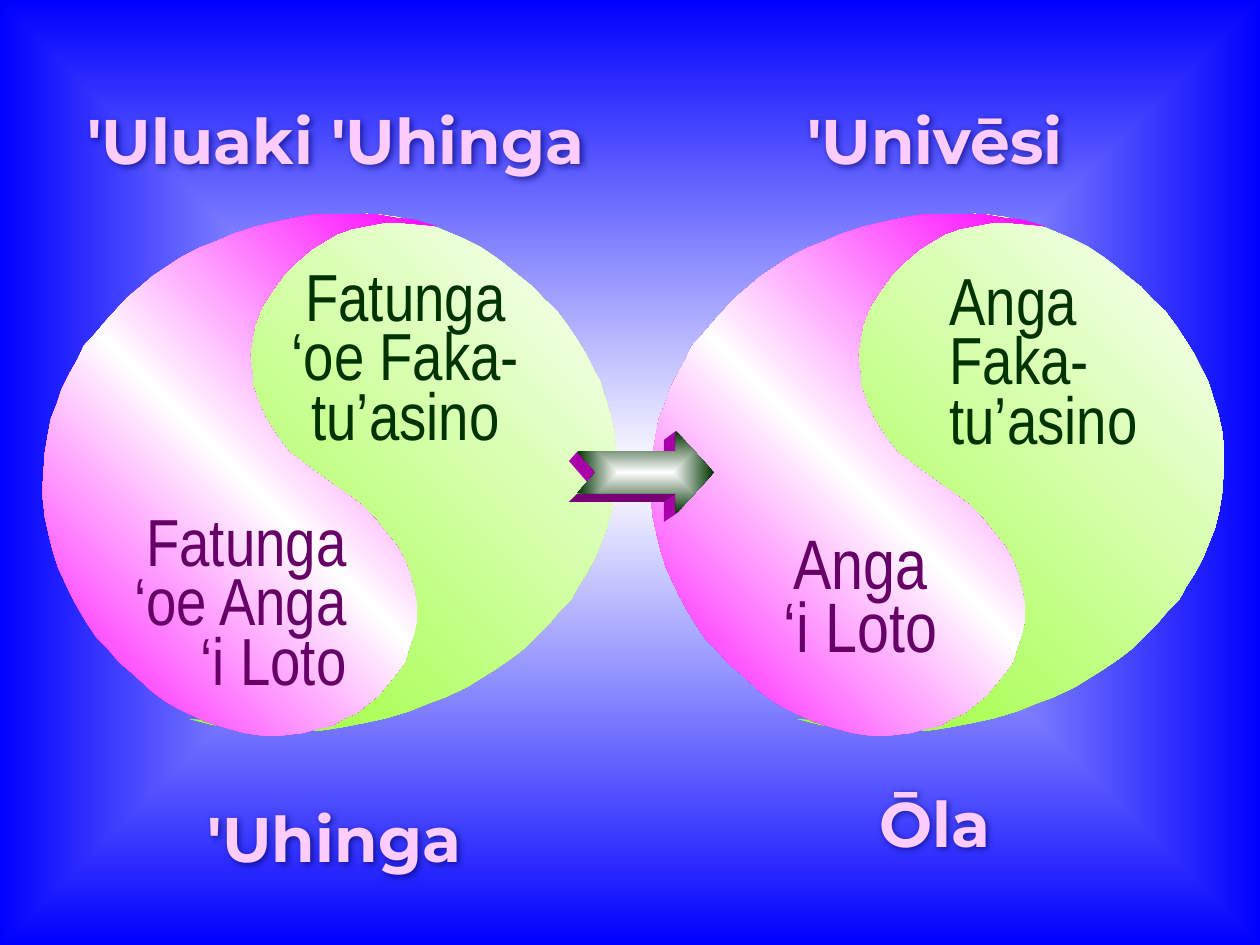
from dataclasses import dataclass

import pptx
import pptx.dml.color
import pptx.enum.shapes
import pptx.enum.text
import pptx.oxml
import pptx.oxml.ns
import pptx.util

PX = 914400 / 126  # EMU in one px
HALF_SHIFT = 608   # from the left emblem to the right one
ALIGN = pptx.enum.text.PP_ALIGN
FIT = pptx.enum.text.MSO_AUTO_SIZE

COLORS = {
    "white": "FFFFFF", "blue": "0000FF", "green": "99FF33", "magenta": "FF00FF",
    "dark_green": "003300", "purple": "660066", "heading": "FFCCFF",
    "shadow": "000066", "side": "AA00AA", "underside": "770077",
}

# Outline of the green half; the magenta half is its scaled half turn
GREEN_OUTLINE = [
    (267, 441), (282, 452), (299, 462), (331, 483), (349, 495), (360, 508), (374, 528),
    (381, 544), (388, 561), (389, 576), (391, 591), (389, 604), (386, 621), (378, 639),
    (368, 653), (355, 669), (338, 685), (324, 696), (310, 704), (296, 711), (281, 716),
    (265, 719), (247, 722), (222, 722), (189, 719), (213, 725), (232, 727), (251, 730),
    (271, 731), (305, 731), (325, 730), (343, 727), (364, 723), (387, 718), (410, 711),
    (427, 704), (446, 697), (467, 687), (496, 669), (512, 658), (525, 648), (537, 636),
    (548, 625), (559, 612), (571, 600), (578, 587), (587, 573), (595, 558), (601, 543),
    (607, 528), (611, 512), (614, 494), (615, 480), (616, 465), (616, 449), (614, 431),
    (610, 413), (605, 397), (600, 381), (593, 368), (586, 354), (578, 341), (568, 326),
    (557, 311), (544, 299), (533, 287), (519, 276), (507, 266), (495, 257), (480, 247),
    (464, 239), (438, 228), (413, 221), (396, 217), (381, 215), (367, 214), (353, 215),
    (335, 217), (318, 221), (302, 224), (290, 231), (275, 237), (263, 246), (251, 255),
    (241, 265), (231, 276), (223, 287), (218, 301), (213, 315), (210, 329), (210, 344),
    (213, 360), (217, 374), (223, 388), (231, 402), (241, 413), (253, 427),
]
MAGENTA_OUTLINE = [
    (round(43 + (616 - x) * 0.92), round(736 - (y - 214) * 1.01)) for x, y in GREEN_OUTLINE
]


@dataclass
class Label:
    lines: list[str]
    box: tuple[int, int, int, int]
    color: str
    size: int = 38
    align: ALIGN = ALIGN.CENTER


HEADINGS = [
    Label(["'Uluaki 'Uhinga"], (42, 95, 588, 95), "heading", 36),
    Label(["'Univēsi"], (725, 95, 420, 84), "heading", 36),
    Label(["'Uhinga"], (102, 793, 465, 97), "heading", 36),
    Label(["Ōla"], (819, 778, 231, 93), "heading", 36),
]
EMBLEM_LABELS = [
    Label(["Fatunga", "‘oe Faka-", "tu’asino"], (275, 267, 261, 193), "dark_green"),
    Label(["Anga", "Faka-", "tu’asino"], (937, 271, 243, 193), "dark_green",
          align=ALIGN.LEFT),
    Label(["Fatunga", "‘oe Anga", "‘i Loto"], (94, 512, 265, 193), "purple",
          align=ALIGN.RIGHT),
    Label(["Anga", "‘i Loto"], (766, 533, 189, 139), "purple", 40),
]
# Visible sides of the raised arrow
ARROW_SIDES = [
    ("side", [(664, 440), (676, 431), (676, 452), (664, 452)]),
    ("side", [(664, 522), (676, 514), (676, 494), (664, 502)]),
    ("side", [(569, 461), (577, 452), (598, 473), (588, 483)]),
    ("underside", [(569, 502), (577, 494), (676, 494), (664, 502)]),
]


def emu(px: float) -> int:
    return round(px * PX)


def rgb(name: str) -> pptx.dml.color.RGBColor:
    return pptx.dml.color.RGBColor.from_string(COLORS[name])


def set_gradient(fill, element, colors: list[str], path: str = "") -> None:
    """Give the fill evenly spaced stops, along a diagonal or from the centre."""
    fill.solid()
    fill.fore_color.rgb = rgb(colors[0])
    stops = "".join(
        f'<a:gs pos="{100000 * i // (len(colors) - 1)}"><a:srgbClr val="{COLORS[c]}"/></a:gs>'
        for i, c in enumerate(colors))
    course = '<a:lin ang="18900000" scaled="0"/>'
    if path:
        course = (f'<a:path path="{path}"><a:fillToRect l="50000" t="50000" '
                  'r="50000" b="50000"/></a:path>')
    gradient = pptx.oxml.parse_xml(
        f'<a:gradFill {pptx.oxml.ns.nsdecls("a")} rotWithShape="1">'
        f"<a:gsLst>{stops}</a:gsLst>{course}</a:gradFill>")
    solid = next(element.iter(pptx.oxml.ns.qn("a:solidFill")))
    solid.getparent().replace(solid, gradient)


def add_outline(slide, points: list[tuple[int, int]], shift: int = 0):
    moved = [(x + shift, y) for x, y in points]
    builder = slide.shapes.build_freeform(*moved[0], scale=PX)
    builder.add_line_segments(moved[1:], close=True)
    shape = builder.convert_to_shape()
    shape.shadow.inherit = False
    shape.line.fill.background()
    return shape


def write_text(shape, label: Label, *, font: str, bold: bool = False,
               spacing: float = 1.0, auto_size: FIT = FIT.NONE) -> None:
    shape.left, shape.top, shape.width, shape.height = map(emu, label.box)
    frame = shape.text_frame
    frame.word_wrap = False
    frame.auto_size = auto_size
    frame.vertical_anchor = pptx.enum.text.MSO_ANCHOR.TOP
    frame.text = "\n".join(label.lines)
    for paragraph in frame.paragraphs:
        paragraph.alignment = label.align
        paragraph.line_spacing = spacing
        style = paragraph.runs[0].font
        style.name, style.size, style.bold = font, pptx.util.Pt(label.size), bold
        style.color.rgb = rgb(label.color)


def add_soft_shadow(shape) -> None:
    shape.element.spPr.append(pptx.oxml.parse_xml(
        f'<a:effectLst {pptx.oxml.ns.nsdecls("a")}>'
        '<a:outerShdw blurRad="50800" dist="19050" dir="2700000" algn="tl" rotWithShape="0">'
        f'<a:srgbClr val="{COLORS["shadow"]}"><a:alpha val="60000"/></a:srgbClr>'
        "</a:outerShdw></a:effectLst>"))


def add_arrow(slide) -> None:
    for color, points in ARROW_SIDES:
        side = add_outline(slide, points)
        side.fill.solid()
        side.fill.fore_color.rgb = rgb(color)
    arrow = slide.shapes.add_shape(
        pptx.enum.shapes.MSO_SHAPE.NOTCHED_RIGHT_ARROW,
        *map(emu, (577, 431, 137, 83)))
    arrow.adjustments[0], arrow.adjustments[1] = 0.5, 0.46
    arrow.shadow.inherit = False
    arrow.line.fill.background()
    set_gradient(arrow.fill, arrow.element, ["white", "dark_green"], path="rect")


def main() -> None:
    presentation = pptx.Presentation()
    presentation.slide_width, presentation.slide_height = emu(1260), emu(945)
    slide = presentation.slides.add_slide(presentation.slide_layouts[5])
    set_gradient(slide.background.fill, slide.element, ["white", "blue"], path="shape")

    # Headings: the first one is the slide title
    for index, heading in enumerate(HEADINGS):
        shape = slide.shapes.add_textbox(0, 0, 0, 0) if index else slide.shapes.title
        write_text(shape, heading, font="Montserrat", bold=True)
        add_soft_shadow(shape)

    # Two emblems, each with a green half below a magenta half
    for shift in (0, HALF_SHIFT):
        green = add_outline(slide, GREEN_OUTLINE, shift)
        set_gradient(green.fill, green.element, ["green", "white"])
        magenta = add_outline(slide, MAGENTA_OUTLINE, shift)
        set_gradient(magenta.fill, magenta.element, ["magenta", "white", "magenta"])

    # Words in the halves
    for label in EMBLEM_LABELS:
        write_text(slide.shapes.add_textbox(0, 0, 0, 0), label, font="Arial Narrow",
                   spacing=0.75, auto_size=FIT.SHAPE_TO_FIT_TEXT)

    add_arrow(slide)
    presentation.save("out.pptx")


if __name__ == "__main__":
    main()
